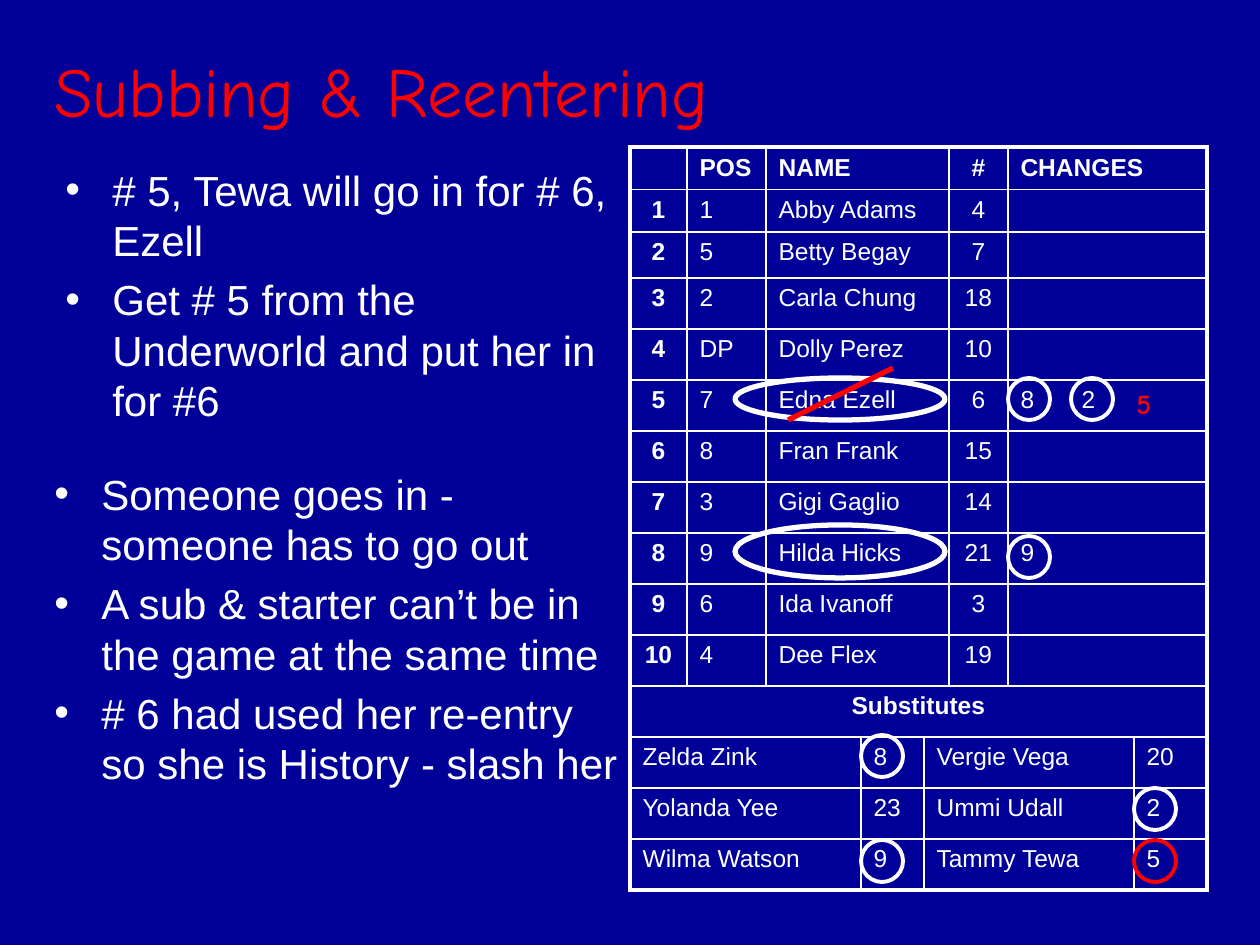
import pptx
import pptx.util
from lxml import etree
from pptx.dml.color import RGBColor
from pptx.enum.shapes import MSO_CONNECTOR, MSO_SHAPE
from pptx.enum.text import MSO_ANCHOR, PP_ALIGN
from pptx.oxml.ns import qn

EMU_PER_PX = 914400 / 126
COLORS = {"navy": "000099", "white": "FFFFFF", "red": "FF0000"}
COLUMN_WIDTHS = [57, 79, 95, 63, 25, 59, 126, 73]
ROW_HEIGHTS = [40, 42, 46] + [51] * 12
LINEUP_SPANS = [1, 1, 3, 1, 2]
BENCH_SPANS = [3, 1, 3, 1]

HEADINGS = ["", "POS", "NAME", "#", "CHANGES"]
STARTERS = [
    ["1", "Abby Adams", "4", ""],
    ["5", "Betty Begay", "7", ""],
    ["2", "Carla Chung", "18", ""],
    ["DP", "Dolly Perez", "10", ""],
    ["7", "Edna Ezell", "6", "8\t2"],
    ["8", "Fran Frank", "15", ""],
    ["3", "Gigi Gaglio", "14", ""],
    ["9", "Hilda Hicks", "21", "9"],
    ["6", "Ida Ivanoff", "3", ""],
    ["4", "Dee Flex", "19", ""],
]
SUBSTITUTES = [
    ["Zelda Zink", "8", "Vergie Vega", "20"],
    ["Yolanda Yee", "23", "Ummi Udall", "2"],
    ["Wilma Watson", "9", "Tammy Tewa", "5"],
]


def px(length):
    return pptx.util.Emu(round(length * EMU_PER_PX))


def rgb(name):
    return RGBColor.from_string(COLORS[name])


class SlideBuilder:
    def __init__(self, slide):
        self.slide = slide
        self.font = "Arial"
        self.accent_font = "Comic Neue"
        slide.background.fill.solid()
        slide.background.fill.fore_color.rgb = rgb("navy")

    def format_runs(self, paragraph, size, color="white", bold=False, font=None):
        for run in paragraph.runs:
            run.font.name = font or self.font
            run.font.size = pptx.util.Pt(size)
            run.font.bold = bold
            run.font.color.rgb = rgb(color)

    def text_frame(self, left, top, width, height):
        frame = self.slide.shapes.add_textbox(px(left), px(top), px(width), px(height)).text_frame
        frame.word_wrap = True
        return frame

    def accent_text(self, text, left, top, width, height, size, bold=False):
        frame = self.text_frame(left, top, width, height)
        frame.text = text
        frame.vertical_anchor = MSO_ANCHOR.MIDDLE
        self.format_runs(frame.paragraphs[0], size, "red", bold, self.accent_font)

    def bullets(self, items, left, top, width, height):
        frame = self.text_frame(left, top, width, height)
        frame.text = "\n".join(items)
        for paragraph in frame.paragraphs:
            paragraph.space_before = pptx.util.Pt(5)
            self.format_runs(paragraph, 24)
            properties = paragraph._p.get_or_add_pPr()
            properties.set("marL", str(px(47)))
            properties.set("indent", str(-px(47)))
            etree.SubElement(properties, qn("a:buFont"), typeface=self.font)
            etree.SubElement(properties, qn("a:buChar"), char="•")

    def ellipse(self, left, top, width, height, color="white", weight=2.25):
        shape = self.slide.shapes.add_shape(
            MSO_SHAPE.OVAL, px(left), px(top), px(width), px(height))
        shape.shadow.inherit = False
        shape.fill.background()
        shape.line.color.rgb = rgb(color)
        shape.line.width = pptx.util.Pt(weight)

    def slash(self, start, end):
        line = self.slide.shapes.add_connector(
            MSO_CONNECTOR.STRAIGHT, *map(px, start + end))
        line.line.color.rgb = rgb("red")
        line.line.width = pptx.util.Pt(3)
        etree.SubElement(line._element.spPr, qn("a:effectLst"))

    def borders(self, cell, outer_sides):
        properties = cell._tc.get_or_add_tcPr()
        for side in "LRTB":
            weight = pptx.util.Pt(2.25 if side in outer_sides else 1)
            border = etree.SubElement(properties, qn("a:ln" + side), w=str(weight))
            fill = etree.SubElement(border, qn("a:solidFill"))
            etree.SubElement(fill, qn("a:srgbClr"), val=COLORS["white"])

    def table_cell(self, cell, text, bold, centered):
        cell.text_frame.text = text
        paragraph = cell.text_frame.paragraphs[0]
        paragraph.alignment = PP_ALIGN.CENTER if centered else PP_ALIGN.LEFT
        self.format_runs(paragraph, 14, bold=bold)
        if "\t" in text:
            tabs = etree.SubElement(paragraph._p.get_or_add_pPr(), qn("a:tabLst"))
            etree.SubElement(tabs, qn("a:tab"), pos=str(px(61)), algn="l")

    def table(self, rows, left, top):
        """Draw rows of (spans, texts, bold columns, centered columns)."""
        table = self.slide.shapes.add_table(
            len(rows), len(COLUMN_WIDTHS), px(left), px(top),
            px(sum(COLUMN_WIDTHS)), px(sum(ROW_HEIGHTS))).table
        table.first_row = table.horz_banding = False
        for column, width in zip(table.columns, COLUMN_WIDTHS):
            column.width = px(width)
        for row, height in zip(table.rows, ROW_HEIGHTS):
            row.height = px(height)
        for row_index, (spans, texts, bold, centered) in enumerate(rows):
            column = 0
            for index, (span, text) in enumerate(zip(spans, texts)):
                cell = table.cell(row_index, column)
                if span > 1:
                    cell.merge(table.cell(row_index, column + span - 1))
                self.table_cell(cell, text, index in bold, index in centered)
                outer = "L" * (column == 0) + "T" * (row_index == 0)
                column += span
                outer += "R" * (column == len(COLUMN_WIDTHS))
                outer += "B" * (row_index == len(rows) - 1)
                self.borders(cell, outer)
                if row_index == 0:
                    cell.vertical_anchor = MSO_ANCHOR.MIDDLE
        for cell in table.iter_cells():
            cell.fill.background()
            # Keeps empty cells from stretching their row
            etree.SubElement(cell.text_frame.paragraphs[0]._p, qn("a:endParaRPr"), sz="1400")


def main():
    presentation = pptx.Presentation()
    presentation.slide_width, presentation.slide_height = px(1260), px(945)
    builder = SlideBuilder(presentation.slides.add_slide(presentation.slide_layouts[6]))

    rows = [(LINEUP_SPANS, HEADINGS, range(5), {3})]
    rows += [(LINEUP_SPANS, [str(order)] + starter, {0}, {0, 3})
             for order, starter in enumerate(STARTERS, 1)]
    rows.append(([8], ["Substitutes"], {0}, {0}))
    rows += [(BENCH_SPANS, names, set(), set()) for names in SUBSTITUTES]
    builder.table(rows, 630, 147)

    builder.accent_text("Subbing & Reentering", 42, 32, 1071, 116, 40)
    builder.bullets([
        "# 5, Tewa will go in for # 6, Ezell",
        "Get # 5 from the Underworld and put her in for #6",
    ], 53, 158, 588, 284)
    builder.bullets([
        "Someone goes in - someone has to go out",
        "A sub & starter can’t be in the game at the same time",
        "# 6 had used her re-entry so she is History - slash her",
    ], 42, 462, 589, 388)

    builder.accent_text("5", 1124, 378, 42, 51, 16, bold=True)
    for top, height in [(525, 53), (378, 42)]:
        builder.ellipse(735, top, 210, height, weight=3)
    for left, top in [(1008, 536), (861, 735), (861, 840),
                      (1008, 378), (1134, 788), (1071, 378)]:
        builder.ellipse(left, top, 42, 42)
    builder.ellipse(1134, 840, 42, 42, "red")
    builder.slash((788, 420), (893, 368))

    presentation.save("out.pptx")


if __name__ == "__main__":
    main()
